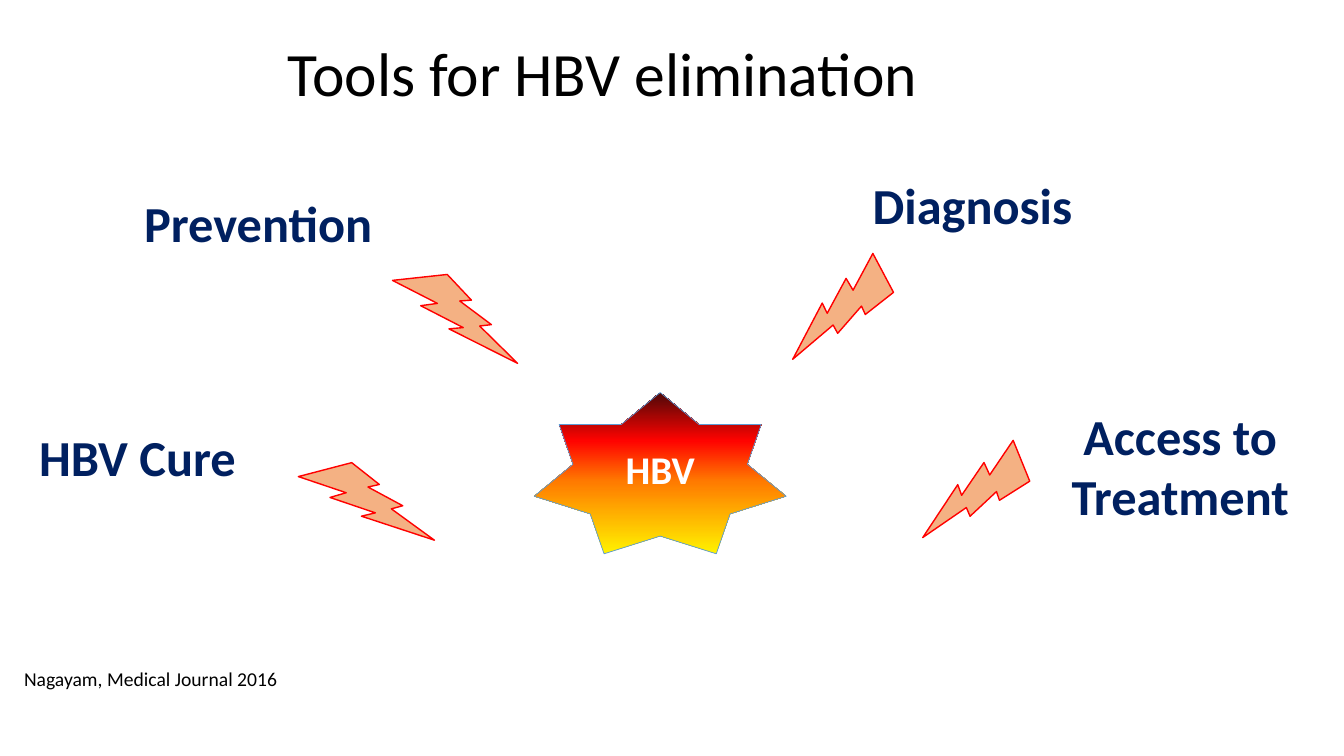
"""Build a slide showing the tools for HBV elimination."""
from dataclasses import dataclass

from lxml.etree import SubElement
from pptx import Presentation
from pptx.dml.color import RGBColor as RGB
from pptx.enum.shapes import MSO_SHAPE as SHAPE
from pptx.enum.text import MSO_ANCHOR as ANCHOR
from pptx.enum.text import MSO_AUTO_SIZE as AUTO
from pptx.enum.text import PP_ALIGN as ALIGN
from pptx.oxml.ns import qn
from pptx.util import Pt

COLORS = {
    "black": "000000",
    "white": "FFFFFF",
    "navy": "002060",
    "bolt": "F4B183",
    "red": "FF0000",
    "blue": "5B9BD5",
}
FLAME = ((0, "FFF200"), (45, "FF7A00"), (70, "FF0300"), (100, "4D0808"))
FONT = "Calibri"


@dataclass(frozen=True)
class Box:
    x: float
    y: float
    w: float
    h: float


@dataclass(frozen=True)
class Label:
    text: str
    box: Box
    size: float = 36
    color: str = "navy"
    bold: bool = True
    align: ALIGN = ALIGN.LEFT


@dataclass(frozen=True)
class Bolt:
    box: Box
    rotation: float = 0


TITLE = Label("Tools for HBV elimination", Box(59, 9.4, 841.7, 90), 44, "black", False)
TITLE_INDENT = 146.5
STAR = Label("HBV", Box(381.6, 280.4, 180, 115.2), 28, "white", True, ALIGN.CENTER)
LABELS = (
    Label("HBV Cure", Box(20.9, 301, 156.2, 51)),
    Label("Prevention", Box(95.8, 133.9, 179.3, 51)),
    Label("Diagnosis", Box(616.3, 121, 159.1, 51)),
    Label("Access to\nTreatment", Box(757.4, 285.8, 171.4, 94.3), align=ALIGN.CENTER),
    Label("Nagayam, Medical Journal 2016", Box(10.1, 473, 216, 24.5), 14, "black", False),
)
BOLTS = (
    Bolt(Box(213.1, 330.5, 97.2, 55.4)),
    Bolt(Box(277.2, 197.3, 97.2, 55.4), 8.5),
    Bolt(Box(661.7, 312.5, 72.7, 74.2), 93),
    Bolt(Box(565.2, 181.4, 72.7, 74.2), 87.2),
)


def rgb(name: str) -> RGB:
    return RGB.from_string(COLORS[name])


def place(box: Box) -> tuple:
    return Pt(box.x), Pt(box.y), Pt(box.w), Pt(box.h)


def write(tf, label: Label) -> None:
    tf.text = label.text
    for p in tf.paragraphs:
        p.alignment = label.align
        for r in p.runs:
            r.font.name = FONT
            r.font.size = Pt(label.size)
            r.font.bold = label.bold
            r.font.color.rgb = rgb(label.color)


def add_shape(s, kind: SHAPE, box: Box, line: str, width: float):
    sp = s.shapes.add_shape(kind, *place(box))
    sp.shadow.inherit = False
    sp.line.color.rgb = rgb(line)
    sp.line.width = Pt(width)
    return sp


def add_title(s) -> None:
    tf = s.shapes.add_textbox(*place(TITLE.box)).text_frame
    tf.word_wrap = True
    tf.vertical_anchor = ANCHOR.MIDDLE
    tf.margin_left = Pt(TITLE_INDENT)
    write(tf, TITLE)
    tf.paragraphs[0].line_spacing = 0.9


def add_star(s) -> None:
    sp = add_shape(s, SHAPE.STAR_7_POINT, STAR.box, "blue", 0.5)
    sp.fill.gradient()
    sp.fill.gradient_angle = 90
    stops = sp.element.spPr.find(".//" + qn("a:gsLst"))
    for stop in list(stops):
        stops.remove(stop)
    for percent, color in FLAME:
        stop = SubElement(stops, qn("a:gs"), pos=str(percent * 1000))
        SubElement(stop, qn("a:srgbClr"), val=color)
    sp.text_frame.vertical_anchor = ANCHOR.MIDDLE
    write(sp.text_frame, STAR)


def add_bolt(s, bolt: Bolt) -> None:
    sp = add_shape(s, SHAPE.LIGHTNING_BOLT, bolt.box, "red", 1)
    sp.fill.solid()
    sp.fill.fore_color.rgb = rgb("bolt")
    sp.rotation = bolt.rotation


def add_label(s, label: Label) -> None:
    tf = s.shapes.add_textbox(*place(label.box)).text_frame
    tf.word_wrap = False
    tf.auto_size = AUTO.SHAPE_TO_FIT_TEXT
    write(tf, label)


def main() -> None:
    prs = Presentation()
    prs.slide_width, prs.slide_height = Pt(960), Pt(540)
    s = prs.slides.add_slide(prs.slide_layouts[6])
    add_title(s)
    add_star(s)
    for bolt in BOLTS:
        add_bolt(s, bolt)
    for label in LABELS:
        add_label(s, label)
    prs.save("out.pptx")


if __name__ == "__main__":
    main()
